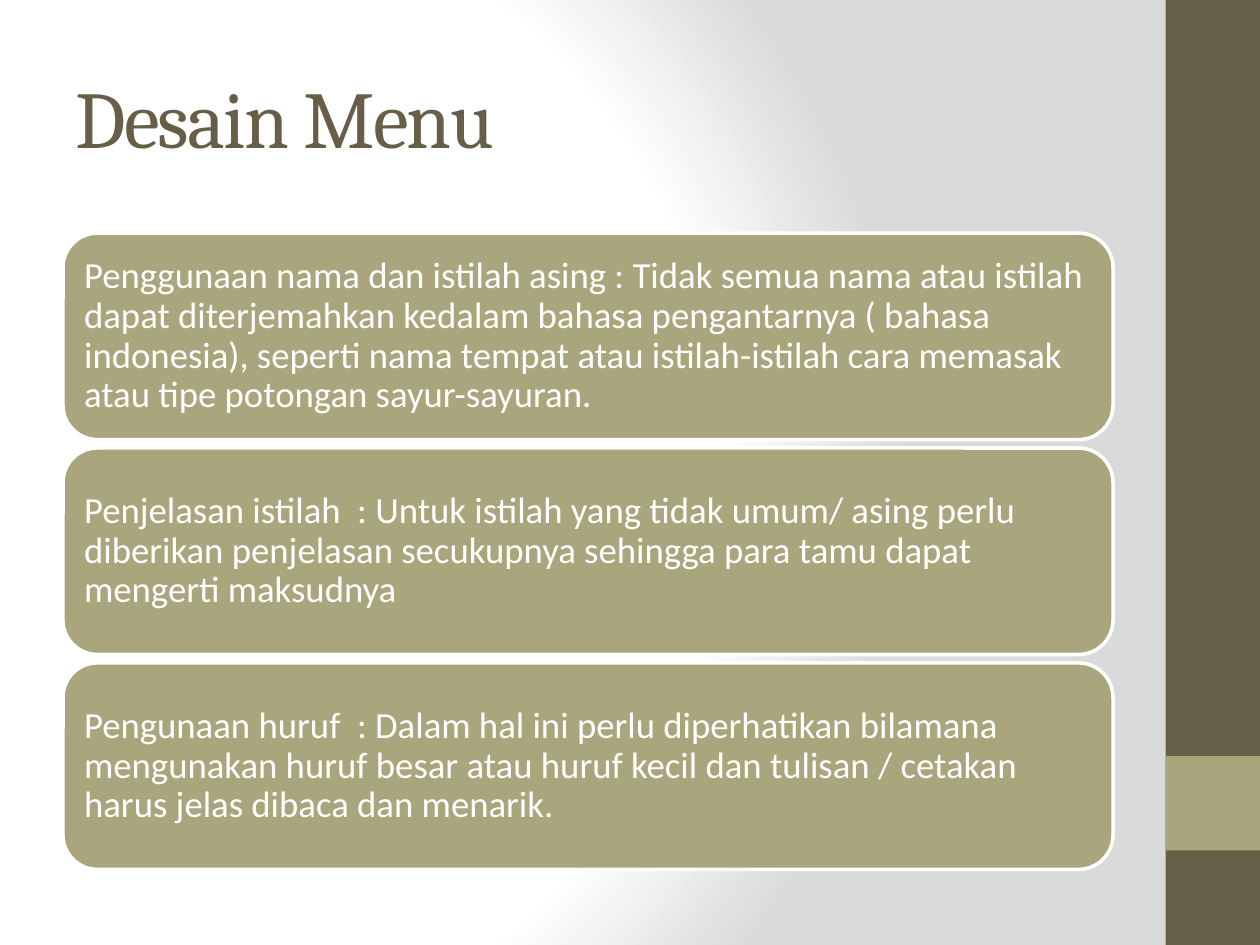
from pptx import Presentation
from pptx.dml.color import RGBColor
from pptx.enum import shapes, text
from pptx.oxml import parse_xml
from pptx.oxml.ns import nsdecls
from pptx.util import Pt

BROWN = RGBColor(0x67, 0x5E, 0x47)
OLIVE = RGBColor(0xA9, 0xA5, 0x7C)
WHITE = RGBColor(0xFF, 0xFF, 0xFF)
GRAY = RGBColor(0xDA, 0xDA, 0xDA)

LEFT, WIDTH = 36, 600
CARD_TOP, CARD_HEIGHT, CARD_STEP = 133.2, 118, 122.8
CARDS = [
    "Penggunaan nama dan istilah asing : Tidak semua nama atau istilah dapat "
    "diterjemahkan kedalam bahasa pengantarnya ( bahasa indonesia), seperti nama "
    "tempat atau istilah-istilah cara memasak atau tipe potongan sayur-sayuran.",
    "Penjelasan istilah  : Untuk istilah yang tidak umum/ asing perlu diberikan "
    "penjelasan secukupnya sehingga para tamu dapat mengerti maksudnya",
    "Pengunaan huruf  : Dalam hal ini perlu diperhatikan bilamana mengunakan huruf "
    "besar atau huruf kecil dan tulisan / cetakan harus jelas dibaca dan menarik.",
]


def set_background(s):
    stops = "".join(
        f'<a:gs pos="{pos * 1000}"><a:srgbClr val="{color}"/></a:gs>'
        for pos, color in ((0, WHITE), (75, WHITE), (100, GRAY))
    )
    s.element.cSld.insert(0, parse_xml(
        f'<p:bg {nsdecls("p", "a")}><p:bgPr><a:gradFill rotWithShape="1">'
        f'<a:gsLst>{stops}</a:gsLst><a:path path="circle">'
        '<a:fillToRect l="20000" t="50000" r="100000" b="50000"/></a:path>'
        '</a:gradFill><a:effectLst/></p:bgPr></p:bg>'
    ))


def add_box(s, kind, left, top, width, height, color):
    sp = s.shapes.add_shape(kind, Pt(left), Pt(top), Pt(width), Pt(height))
    sp.shadow.inherit = False
    sp.fill.solid()
    sp.fill.fore_color.rgb = color
    sp.line.fill.background()
    return sp


def write_text(sp, content, font, size, color):
    tf = sp.text_frame
    tf.word_wrap = True
    tf.vertical_anchor = text.MSO_ANCHOR.MIDDLE
    p = tf.paragraphs[0]
    p.alignment = text.PP_ALIGN.LEFT
    r = p.add_run()
    r.text = content
    r.font.name = font
    r.font.size = Pt(size)
    r.font.color.rgb = color
    return p, r


def add_title(s, content):
    sp = s.shapes.title
    sp.left, sp.top, sp.width, sp.height = Pt(LEFT), Pt(21.6), Pt(WIDTH), Pt(90)
    p, r = write_text(sp, content, "Cambria", 46, BROWN)
    r.font._element.set("spc", "-100")


def add_card(s, top, content):
    sp = add_box(s, shapes.MSO_SHAPE.ROUNDED_RECTANGLE,
                 LEFT, top, WIDTH, CARD_HEIGHT, OLIVE)
    sp.line.color.rgb = WHITE
    sp.line.width = Pt(2)
    tf = sp.text_frame
    tf.margin_left = tf.margin_right = tf.margin_top = tf.margin_bottom = Pt(6.3)
    p, r = write_text(sp, content, "Calibri", 21, WHITE)
    p.line_spacing = 0.9


def main():
    prs = Presentation()
    prs.slide_width, prs.slide_height = Pt(720), Pt(540)
    s = prs.slides.add_slide(prs.slide_layouts[5])
    set_background(s)
    add_box(s, shapes.MSO_SHAPE.RECTANGLE, 666, 0, 54, 540, BROWN)
    add_box(s, shapes.MSO_SHAPE.RECTANGLE, 666, 432, 54, 54, OLIVE)
    add_title(s, "Desain Menu")
    for i, content in enumerate(CARDS):
        add_card(s, CARD_TOP + i * CARD_STEP, content)
    prs.save("out.pptx")


if __name__ == "__main__":
    main()
